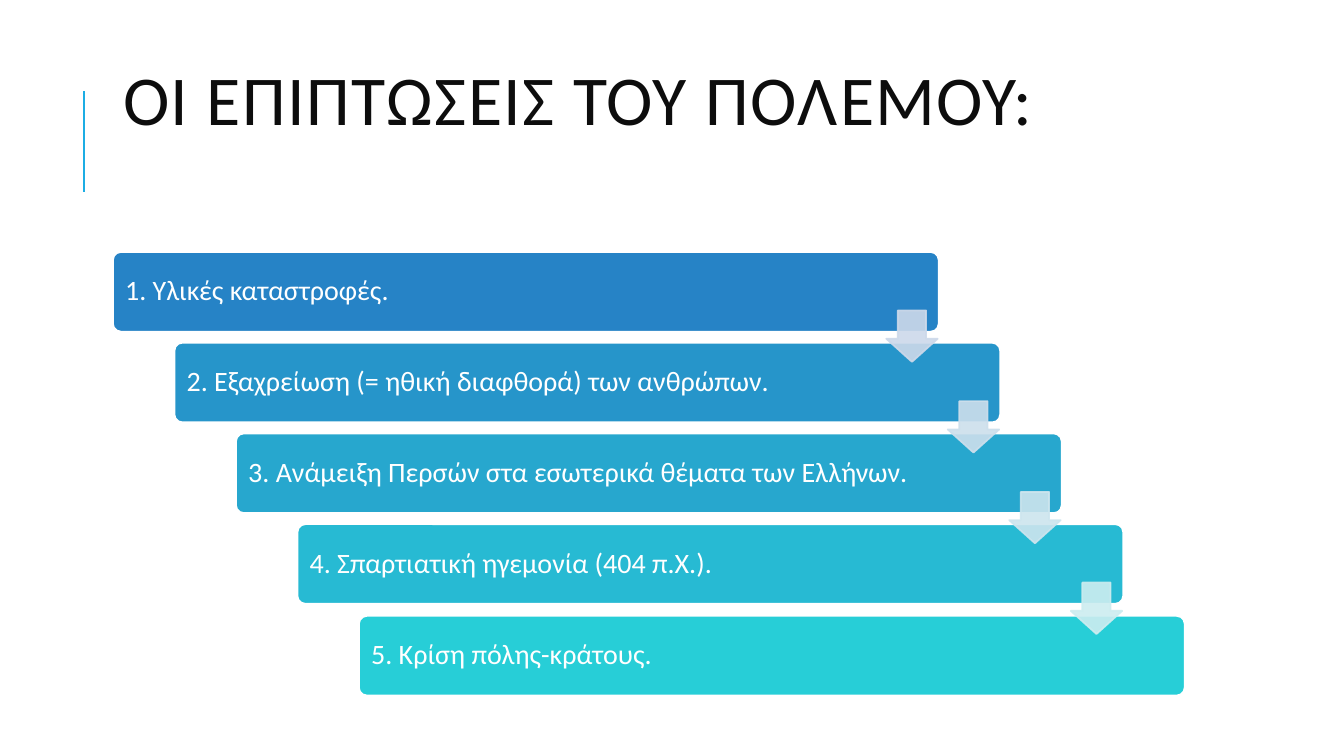
from lxml.etree import SubElement
from pptx import Presentation
from pptx.dml.color import RGBColor
from pptx.enum.shapes import MSO_CONNECTOR, MSO_SHAPE
from pptx.enum.text import MSO_ANCHOR, MSO_AUTO_SIZE, PP_ALIGN
from pptx.oxml.ns import qn
from pptx.util import Emu, Pt

FONT = "Calibri"
COLORS = {"ink": "0D0D0D", "rule": "1CADE4", "white": "FFFFFF"}
STEPS = [
    ("1. Υλικές καταστροφές.", "2683C6", "CDD9EA"),
    ("2. Εξαχρείωση (= ηθική διαφθορά) των ανθρώπων.", "2695CA", "CDDFEC"),
    ("3. Ανάμειξη Περσών στα εσωτερικά θέματα των Ελλήνων.", "27A7CE", "CDE5EE"),
    ("4. Σπαρτιατική ηγεμονία (404 π.Χ.).", "27BAD3", "CDEDF0"),
    ("5. Κρίση πόλης-κράτους.", "27CED7", None),
]


def px(n):
    """Turn px, at 100 to the inch, into EMU."""
    return Emu(n * 9144)


def rgb(code):
    """Give the colour for a hex string."""
    return RGBColor.from_string(code)


def write(para, text, size, color):
    """Add one styled run to a paragraph."""
    run = para.add_run()
    run.text = text
    run.font.name = FONT
    run.font.size = Pt(size)
    run.font.color.rgb = rgb(color)
    return run


def block(slide, kind, box, ratios, fill, line):
    """Draw one flat preset shape in a box."""
    shape = slide.shapes.add_shape(kind, *map(px, box))
    for i, ratio in enumerate(ratios):
        shape.adjustments[i] = ratio
    shape.shadow.inherit = False
    shape.fill.solid()
    shape.fill.fore_color.rgb = rgb(fill)
    shape.line.color.rgb = rgb(line)
    shape.line.width = Pt(1.25)
    return shape


def rule(slide, x, top, end):
    """Draw the thin upright line beside the title."""
    line = slide.shapes.add_connector(
        MSO_CONNECTOR.STRAIGHT, px(x), px(end), px(x), px(top))
    line.line.color.rgb = rgb(COLORS["rule"])
    line.line.width = Pt(1.5)
    SubElement(line._element.spPr, qn("a:effectLst"))


def heading(slide, box, text):
    """Fill the title, set in capitals above one open line."""
    title = slide.shapes.title
    title.left, title.top, title.width, title.height = map(px, box)
    frame = title.text_frame
    frame.word_wrap = True
    frame.auto_size = MSO_AUTO_SIZE.NONE
    frame.vertical_anchor = MSO_ANCHOR.MIDDLE
    para = frame.paragraphs[0]
    para.alignment = PP_ALIGN.LEFT
    para.line_spacing = 0.8
    run = write(para, text, 50, COLORS["ink"])
    props = run._r.get_or_add_rPr()
    props.set("cap", "all")
    props.set("spc", "100")
    para.add_line_break()
    SubElement(para._p[-1], qn("a:rPr"), sz="5000")
    SubElement(para._p, qn("a:endParaRPr"), sz="5000")


def bar(slide, box, text, fill):
    """Draw one rounded step with its text."""
    shape = block(slide, MSO_SHAPE.ROUNDED_RECTANGLE, box, [0.1],
                  fill, COLORS["white"])
    frame = shape.text_frame
    frame.word_wrap = True
    frame.vertical_anchor = MSO_ANCHOR.MIDDLE
    frame.margin_left = frame.margin_right = px(10)
    para = frame.paragraphs[0]
    para.alignment = PP_ALIGN.LEFT
    para.line_spacing = 0.9
    write(para, text, 20, COLORS["white"])


def arrow(slide, box, color):
    """Draw one pale, slightly clear arrow."""
    shape = block(slide, MSO_SHAPE.DOWN_ARROW, box, [0.55, 0.45], color, color)
    for tone in shape._element.spPr.iter(qn("a:srgbClr")):
        SubElement(tone, qn("a:alpha"), val="90000")


def stairs(slide, box, steps):
    """Place the steps down the box, then the arrows that join them."""
    left, top, width, height = box
    wide, tall, side = 819, 79, 51
    gaps = len(steps) - 1
    spots = [(left + (width - wide) * i // gaps,
              top + (height - tall) * i // gaps) for i in range(len(steps))]
    for (x, y), (text, fill, _) in zip(spots, steps):
        bar(slide, (x, y, wide, tall), text, fill)
    for (x, y), (_, _, pale) in zip(spots[:-1], steps):
        arrow(slide, (x + wide - side - 1, y + 58, side, side), pale)


def main():
    """Build and save the slide."""
    deck = Presentation()
    deck.slide_width, deck.slide_height = px(1333), px(750)
    slide = deck.slides.add_slide(deck.slide_layouts[5])
    rule(slide, 83, 90, 190)
    heading(slide, (112, 64, 1063, 164), "Οι επιπτώσεις του πολέμου:")
    stairs(slide, (112, 250, 1063, 440), STEPS)
    deck.save("out.pptx")


if __name__ == "__main__":
    main()
